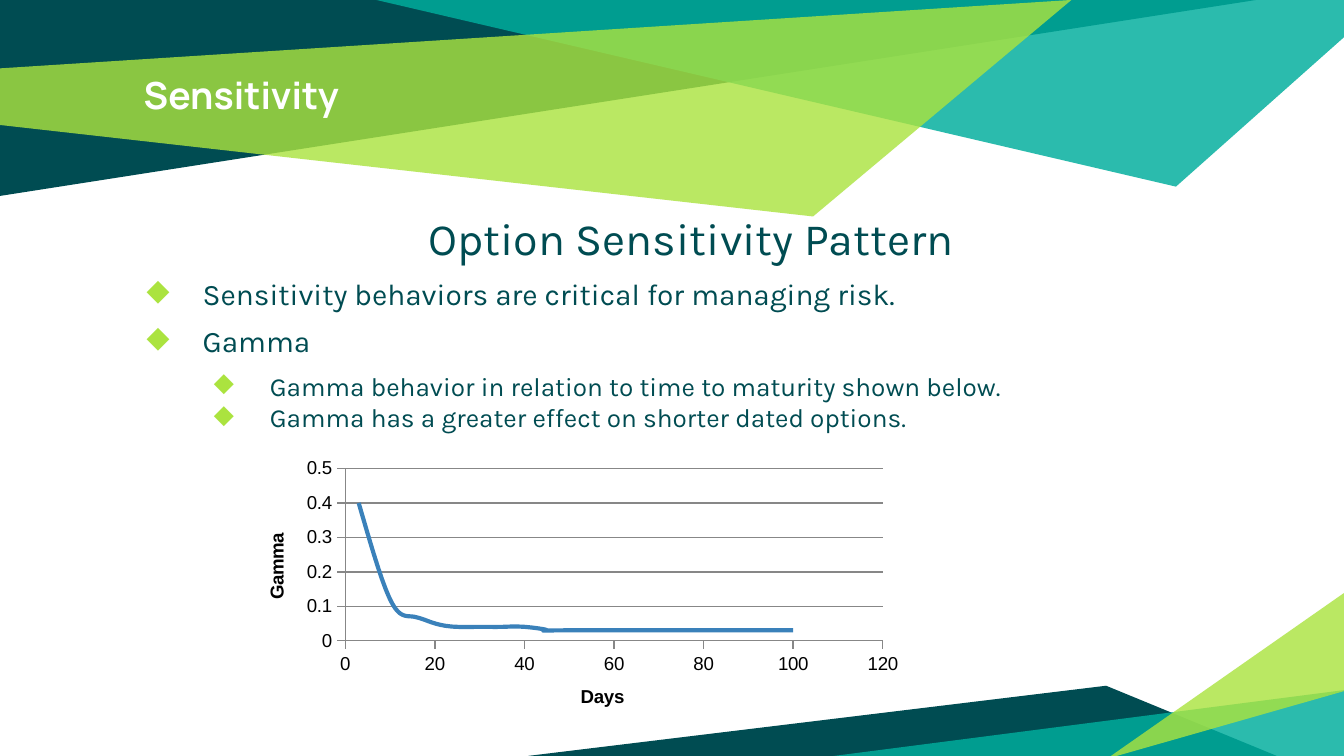
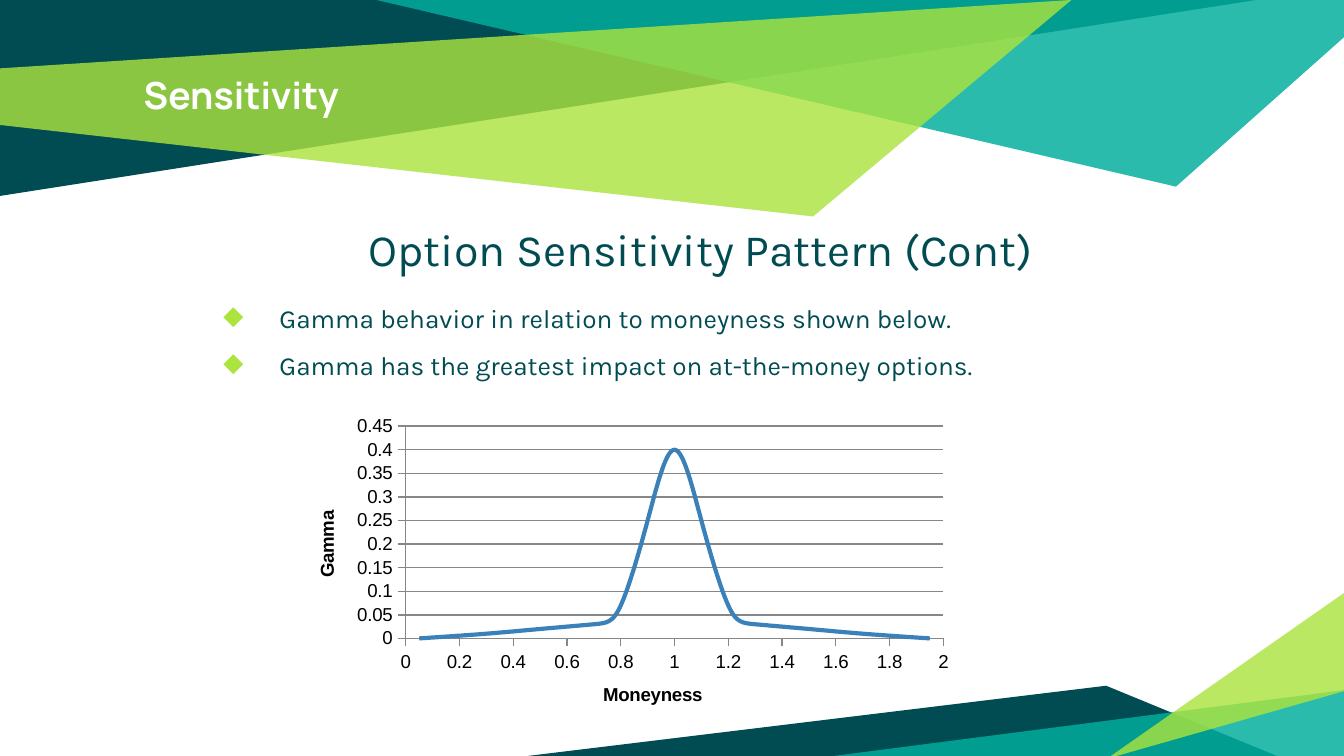
"""Build two slides on how option gamma varies with maturity and moneyness."""
from lxml import etree
from pptx import Presentation
from pptx import util as u
from pptx.chart.data import XyChartData
from pptx.dml.color import RGBColor
from pptx.enum import chart as charts, text
from pptx.oxml.ns import qn

COLORS = {"dark": "004C52", "teal": "00AE9D", "green": "ABE33F", "white": "FFFFFF",
          "black": "000000", "curve": "3A81BA", "grid": "878787"}
BANDS = [
    ("dark", 100, [(0, 0), (0, 105), (673, 0)]),
    ("teal", 83, [(201.6, 0), (630, 100), (720, 20), (720, 0)]),
    ("green", 81, [(-0.5, 36.7), (0, 67), (435.6, 116), (574, 0)]),
    ("dark", 100, [(283, 405), (684, 405), (592.6, 367.4)]),
    ("teal", 83, [(721, 369.6), (721, 406.5), (435, 406.5)]),
    ("green", 81, [(721, 370), (721, 317), (593, 406.5)]),
]
SLIDES = [
    {
        "heading": "Option Sensitivity Pattern",
        "body": (65.5, 105.8, 603.4, 283.7),
        "bullets": [
            ("Sensitivity behaviors are critical for managing risk.", 0, 6),
            ("Gamma", 0, 6),
            ("Gamma behavior in relation to time to maturity shown below.", 1, 6),
            ("Gamma has a greater effect on shorter dated options.", 1, 0),
        ],
        "line_spacing": 1.0,
        "chart": (127.4, 242, 360, 151.2),
        "plot": {"x": 0.16, "y": 0.06, "w": 0.8, "h": 0.61},
        "x_axis": ("Days", 120, 20),
        "y_axis": ("Gamma", 0.5, 0.1),
        "points": [(3, 0.4), (10, 0.12), (15, 0.07), (20, 0.05), (25, 0.04), (30, 0.04),
                   (35, 0.04), (40, 0.04), (45, 0.03), (50, 0.03), (100, 0.03)],
    },
    {
        "heading": "Option Sensitivity Pattern (Cont)",
        "body": (70.6, 111.6, 603.4, 272.2),
        "bullets": [
            ("Gamma behavior in relation to moneyness shown below.", 1, 6),
            ("Gamma has the greatest impact on at-the-money options.", 1, 0),
        ],
        "line_spacing": 1.5,
        "chart": (156.2, 219.6, 360, 175),
        "plot": {"x": 0.17, "y": 0.05, "w": 0.8, "h": 0.65},
        "x_axis": ("Moneyness", 2, 0.2),
        "y_axis": ("Gamma", 0.45, 0.05),
        "points": [(0.05, 0), (0.3, 0.01), (0.5, 0.02), (0.7, 0.03), (0.8, 0.07),
                   (0.9, 0.25), (1, 0.4), (1.1, 0.25), (1.2, 0.07), (1.3, 0.03),
                   (1.5, 0.02), (1.7, 0.01), (1.95, 0)],
    },
]


def rgb(name):
    return RGBColor.from_string(COLORS[name])


def set_font(font, name, size, color, bold=False):
    font.name, font.size, font.bold = name, u.Pt(size), bold
    font.color.rgb = rgb(color)


presentation = Presentation()
presentation.slide_width, presentation.slide_height = u.Pt(720), u.Pt(405)
layout = presentation.slide_layouts[5]
slides = [presentation.slides.add_slide(layout) for _ in SLIDES]

for position, (color, opacity, corners) in enumerate(BANDS, start=2):
    corners = [(u.Pt(x), u.Pt(y)) for x, y in corners]
    builder = slides[0].shapes.build_freeform(*corners[0])
    builder.add_line_segments(corners[1:], close=True)
    band = builder.convert_to_shape()
    band.shadow.inherit = False
    band.fill.solid()
    band.fill.fore_color.rgb = rgb(color)
    band.line.fill.background()
    if opacity < 100:
        fill_color = next(band.element.iter(qn("a:srgbClr")))
        etree.SubElement(fill_color, qn("a:alpha"), val=str(opacity * 1000))
    layout.shapes.element.insert(position, band.element)

for slide, content in zip(slides, SLIDES):
    title = slide.shapes.title
    title.left, title.top, title.width, title.height = map(u.Pt, (69.8, 31.7, 580.3, 46))
    title.text_frame.text = "Sensitivity"
    title_paragraph = title.text_frame.paragraphs[0]
    title_paragraph.alignment = text.PP_ALIGN.LEFT
    set_font(title_paragraph.font, "Manrope", 20, "white", True)

    body = slide.shapes.add_textbox(*map(u.Pt, content["body"]))
    for frame in (title.text_frame, body.text_frame):
        frame.word_wrap = True
        frame.auto_size = text.MSO_AUTO_SIZE.NONE
        frame.vertical_anchor = text.MSO_ANCHOR.TOP
        frame.margin_left = frame.margin_right = u.Pt(7.2)
        frame.margin_top = frame.margin_bottom = u.Pt(7.2)

    heading = body.text_frame.paragraphs[0]
    heading.text = content["heading"]
    heading.alignment = text.PP_ALIGN.CENTER
    heading.space_before = u.Pt(6)
    set_font(heading.font, "Karla", 24, "dark")
    heading._p.get_or_add_pPr().set("marL", str(u.Pt(6)))

    for wording, level, space_before in content["bullets"]:
        paragraph = body.text_frame.add_paragraph()
        paragraph.text = wording
        paragraph.level = level
        paragraph.space_before = u.Pt(space_before)
        paragraph.line_spacing = content["line_spacing"]
        set_font(paragraph.font, "Karla", 16 - 2 * level, "dark")
        properties = paragraph._p.get_or_add_pPr()
        properties.set("marL", str(u.Pt(36 * (level + 1))))
        properties.set("indent", str(u.Pt(-30)))
        bullet_color = etree.Element(qn("a:buClr"))
        etree.SubElement(bullet_color, qn("a:srgbClr"), val=COLORS["green"])
        bullet = etree.Element(qn("a:buChar"), char="◆")
        properties.find(qn("a:defRPr")).addprevious(bullet_color)
        bullet_color.addnext(bullet)

    data = XyChartData()
    series_data = data.add_series("Series 1")
    for x, y in content["points"]:
        series_data.add_data_point(x, y)
    chart = slide.shapes.add_chart(charts.XL_CHART_TYPE.XY_SCATTER_SMOOTH_NO_MARKERS,
                                   *map(u.Pt, content["chart"]), data).chart
    chart.has_legend = chart.has_title = False
    set_font(chart.font, "Arial", 10, "black")
    plot = chart.plots[0]
    plot.vary_by_categories = False
    curve = plot.series[0]
    curve.marker.style = charts.XL_MARKER_STYLE.NONE
    curve.format.line.color.rgb = rgb("curve")
    curve.format.line.width = u.Pt(2.25)
    for smooth in chart.element.iter(qn("c:smooth")):
        smooth.set("val", "1")

    axes = ((chart.category_axis, content["x_axis"]), (chart.value_axis, content["y_axis"]))
    for axis, (name, maximum, step) in axes:
        axis.minimum_scale, axis.maximum_scale, axis.major_unit = 0, maximum, step
        axis.major_tick_mark = charts.XL_TICK_MARK.OUTSIDE
        axis.minor_tick_mark = charts.XL_TICK_MARK.NONE
        axis.tick_labels.number_format = "General"
        axis.tick_labels.number_format_is_linked = False
        axis.format.line.color.rgb = rgb("grid")
        axis.has_major_gridlines = axis is chart.value_axis
        axis.axis_title.text_frame.text = name
        set_font(axis.axis_title.text_frame.paragraphs[0].font, "Arial", 10, "black", True)
    chart.category_axis.has_major_gridlines = False
    chart.value_axis.has_major_gridlines = True
    chart.value_axis.major_gridlines.format.line.color.rgb = rgb("grid")

    plot_area = next(chart.element.iter(qn("c:plotArea")))
    for automatic in plot_area.findall(qn("c:layout")):
        plot_area.remove(automatic)
    plot_layout = etree.Element(qn("c:layout"))
    manual = etree.SubElement(plot_layout, qn("c:manualLayout"))
    settings = {"layoutTarget": "inner", "xMode": "edge", "yMode": "edge", **content["plot"]}
    for name, value in settings.items():
        etree.SubElement(manual, qn(f"c:{name}"), val=str(value))
    plot_area.insert(0, plot_layout)

presentation.save("out.pptx")
